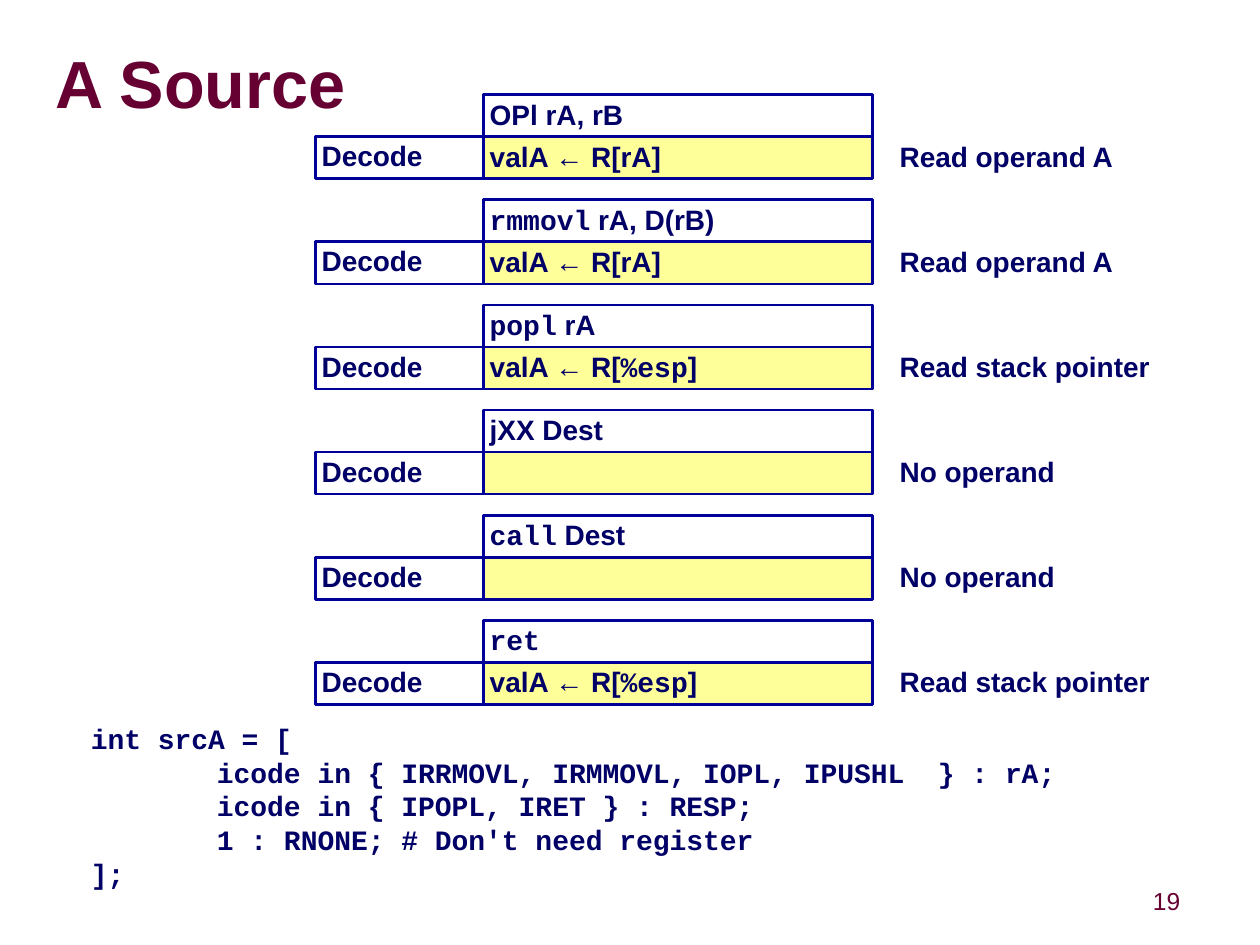
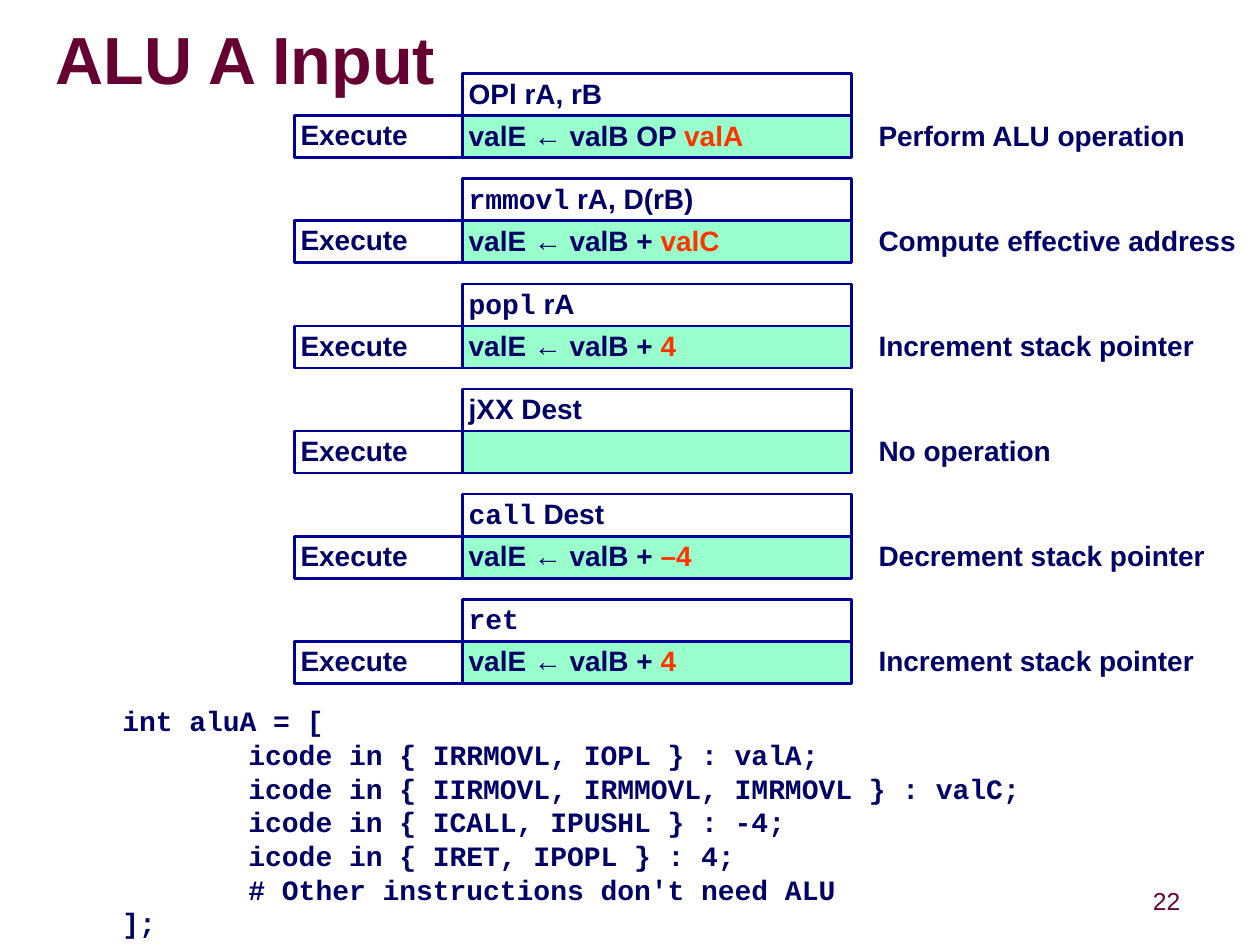
import pptx
import pptx.util
import pptx.dml.color
import pptx.enum.shapes
import pptx.enum.text

RGBColor = pptx.dml.color.RGBColor
Inches = pptx.util.Inches
Pt = pptx.util.Pt
Anchor = pptx.enum.text.MSO_ANCHOR
Align = pptx.enum.text.PP_ALIGN

MAROON = RGBColor(0x66, 0x00, 0x33)
NAVY = RGBColor(0x00, 0x00, 0x66)
BORDER = RGBColor(0x00, 0x00, 0x99)
ORANGE = RGBColor(0xFF, 0x33, 0x00)
YELLOW = RGBColor(0xFF, 0xFF, 0x99)
GREEN = RGBColor(0x99, 0xFF, 0xCC)

SANS, MONO = "Arial", "Courier New"
UNIT = 1 / 6
ROW = 2 * UNIT
PITCH = 5 * UNIT
STAGE_WIDTH = 8 * UNIT
STEP_WIDTH = 18.5 * UNIT
NOTE_GAP = UNIT

INSTRUCTIONS = [
    ["OPl rA, rB"],
    [("rmmovl", MONO), " rA, D(rB)"],
    [("popl", MONO), " rA"],
    ["jXX Dest"],
    [("call", MONO), " Dest"],
    [("ret", MONO)],
]

READ_RA = ["valA ← R[rA]"]
READ_ESP = ["valA ← R[", ("%esp", MONO), "]"]
DECODE_STEPS = [
    (READ_RA, "Read operand A"),
    (READ_RA, "Read operand A"),
    (READ_ESP, "Read stack pointer"),
    ([], "No operand"),
    ([], "No operand"),
    (READ_ESP, "Read stack pointer"),
]
ADD_FOUR = ["valE ← valB + ", ("4", ORANGE)]
EXECUTE_STEPS = [
    (["valE ← valB OP ", ("valA", ORANGE)], "Perform ALU operation"),
    (["valE ← valB + ", ("valC", ORANGE)], "Compute effective address"),
    (ADD_FOUR, "Increment stack pointer"),
    ([], "No operation"),
    (["valE ← valB + ", ("–4", ORANGE)], "Decrement stack pointer"),
    (ADD_FOUR, "Increment stack pointer"),
]
SOURCE_CODE = [
    "icode in { IRRMOVL, IRMMOVL, IOPL, IPUSHL  } : rA;",
    "icode in { IPOPL, IRET } : RESP;",
    "1 : RNONE; # Don't need register",
]
ALU_CODE = [
    "icode in { IRRMOVL, IOPL } : valA;",
    "icode in { IIRMOVL, IRMMOVL, IMRMOVL } : valC;",
    "icode in { ICALL, IPUSHL } : -4;",
    "icode in { IRET, IPOPL } : 4;",
    "# Other instructions don't need ALU",
]


def set_frame(frame, inset=0.05, anchor=Anchor.TOP, wrap=True):
    frame.margin_left = frame.margin_right = Inches(inset)
    frame.margin_top = frame.margin_bottom = Inches(inset)
    frame.vertical_anchor = anchor
    frame.word_wrap = wrap
    frame.auto_size = pptx.enum.text.MSO_AUTO_SIZE.NONE


def style_paragraph(para, size=16, name=SANS, color=NAVY, bold=True,
                    spacing=0.9, align=Align.LEFT):
    para.font.size = Pt(size)
    para.font.name = name
    para.font.color.rgb = color
    para.font.bold = bold
    para.line_spacing = spacing
    para.alignment = align


def add_spans(para, pieces):
    for piece in pieces:
        text, look = piece if isinstance(piece, tuple) else (piece, SANS)
        span = para.add_run()
        span.text = text
        if look == MONO:
            span.font.name = MONO
        elif look == ORANGE:
            span.font.color.rgb = ORANGE


def add_text(page, left, top, width, height, **frame_options):
    box = page.shapes.add_textbox(*map(Inches, (left, top, width, height)))
    set_frame(box.text_frame, **frame_options)
    return box.text_frame


def add_cell(page, left, top, width, pieces, fill=None, anchor=Anchor.TOP):
    box = page.shapes.add_shape(pptx.enum.shapes.MSO_SHAPE.RECTANGLE,
                                *map(Inches, (left, top, width, ROW)))
    box.shadow.inherit = False
    box.line.color.rgb = BORDER
    box.line.width = Pt(1.5)
    if fill is None:
        box.fill.background()
    else:
        box.fill.solid()
        box.fill.fore_color.rgb = fill
    set_frame(box.text_frame, anchor=anchor)
    para = box.text_frame.paragraphs[0]
    style_paragraph(para)
    add_spans(para, pieces)


def add_instruction(page, left, top, instruction, stage, step, note, fill):
    step_left = left + STAGE_WIDTH
    note_left = step_left + STEP_WIDTH + NOTE_GAP
    add_cell(page, step_left, top, STEP_WIDTH, instruction)
    add_cell(page, step_left, top + ROW, STEP_WIDTH, step, fill)
    add_cell(page, left, top + ROW, STAGE_WIDTH, [stage], anchor=Anchor.MIDDLE)
    para = add_text(page, note_left, top + ROW, STEP_WIDTH, ROW).paragraphs[0]
    para.text = note
    style_paragraph(para)


def add_code(page, left, top, name, body):
    lines = [(f"int {name} = [", 0), *((line, 1) for line in body), ("];", 0)]
    frame = add_text(page, left, top, 8.75, 0.1 + 0.27 * len(lines))
    for index, (line, indent) in enumerate(lines):
        para = frame.add_paragraph() if index else frame.paragraphs[0]
        para.text = line
        style_paragraph(para, name=MONO, spacing=1.0)
        properties = para._p.get_or_add_pPr()
        properties.set("marL", str(Inches(indent)))
        properties.set("indent", "0")


def add_page(deck, title, title_top, number):
    page = deck.slides.add_slide(deck.slide_layouts[5])
    box = page.shapes.title
    box.left, box.top, box.width, box.height = map(
        Inches, (0.44, title_top, 9.52, 0.85))
    set_frame(box.text_frame, inset=0, anchor=Anchor.MIDDLE)
    para = box.text_frame.paragraphs[0]
    para.text = title
    style_paragraph(para, size=38, color=MAROON, spacing=0.87)
    para = add_text(page, 9.08, 7, 0.34, 0.31, anchor=Anchor.MIDDLE,
                    wrap=False).paragraphs[0]
    para.text = number
    style_paragraph(para, size=14, color=MAROON, bold=False, align=Align.CENTER)
    return page


def add_stage_table(page, left, top, stage, steps, fill):
    for index, (instruction, (step, note)) in enumerate(zip(INSTRUCTIONS, steps)):
        add_instruction(page, left, top + index * PITCH, instruction,
                        stage, step, note, fill)


def main():
    deck = pptx.Presentation()
    deck.slide_width, deck.slide_height = Inches(9.99), Inches(7.49)

    page = add_page(deck, "A Source", 0.27, "19")
    add_stage_table(page, 15 * UNIT, 4.5 * UNIT, "Decode", DECODE_STEPS, YELLOW)
    add_code(page, 0.67, 5.67, "srcA", SOURCE_CODE)

    page = add_page(deck, "ALU A Input", 0.08, "22")
    add_stage_table(page, 14 * UNIT, 3.5 * UNIT, "Execute", EXECUTE_STEPS, GREEN)
    add_code(page, 0.92, 5.53, "aluA", ALU_CODE)

    deck.save("out.pptx")


if __name__ == "__main__":
    main()
